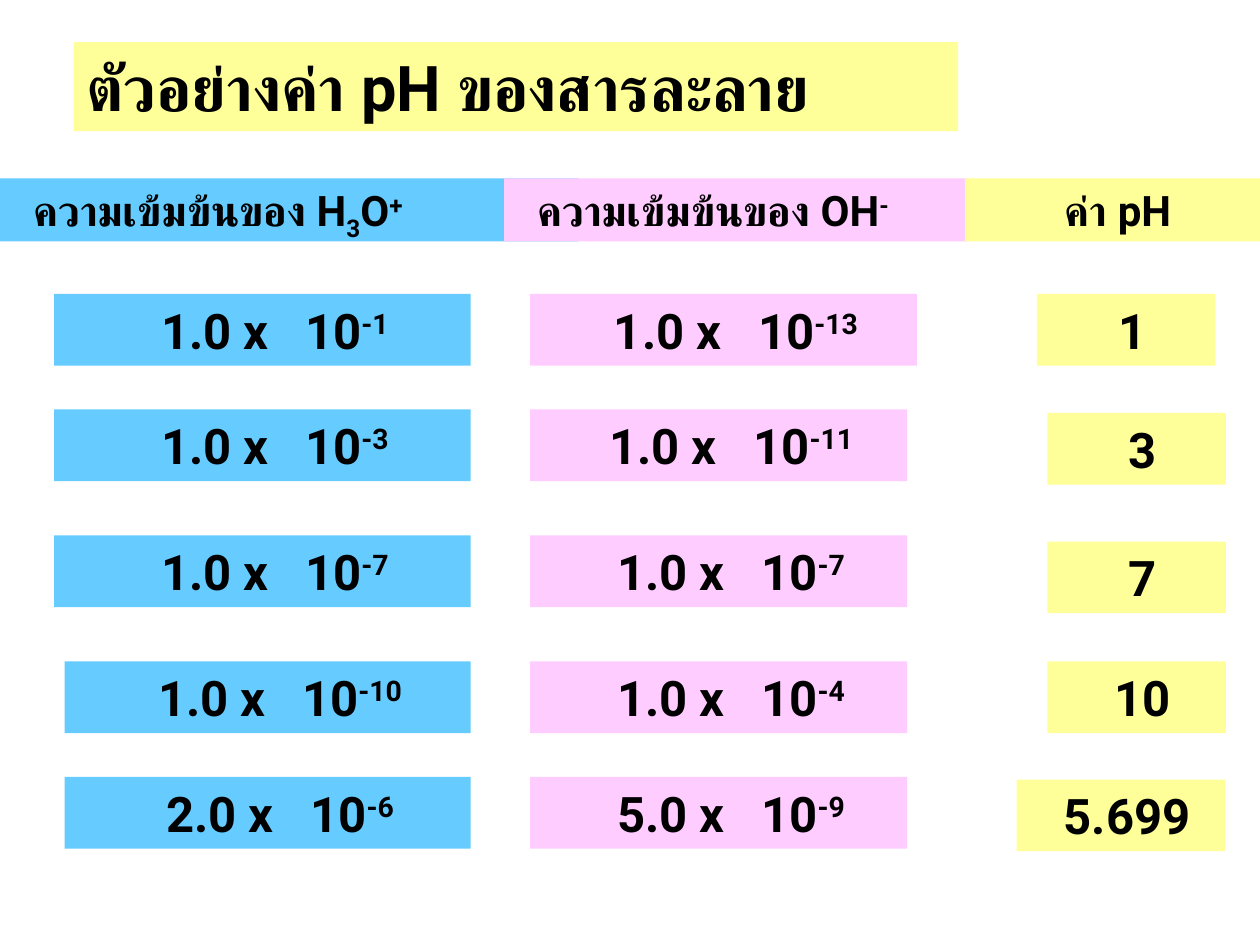
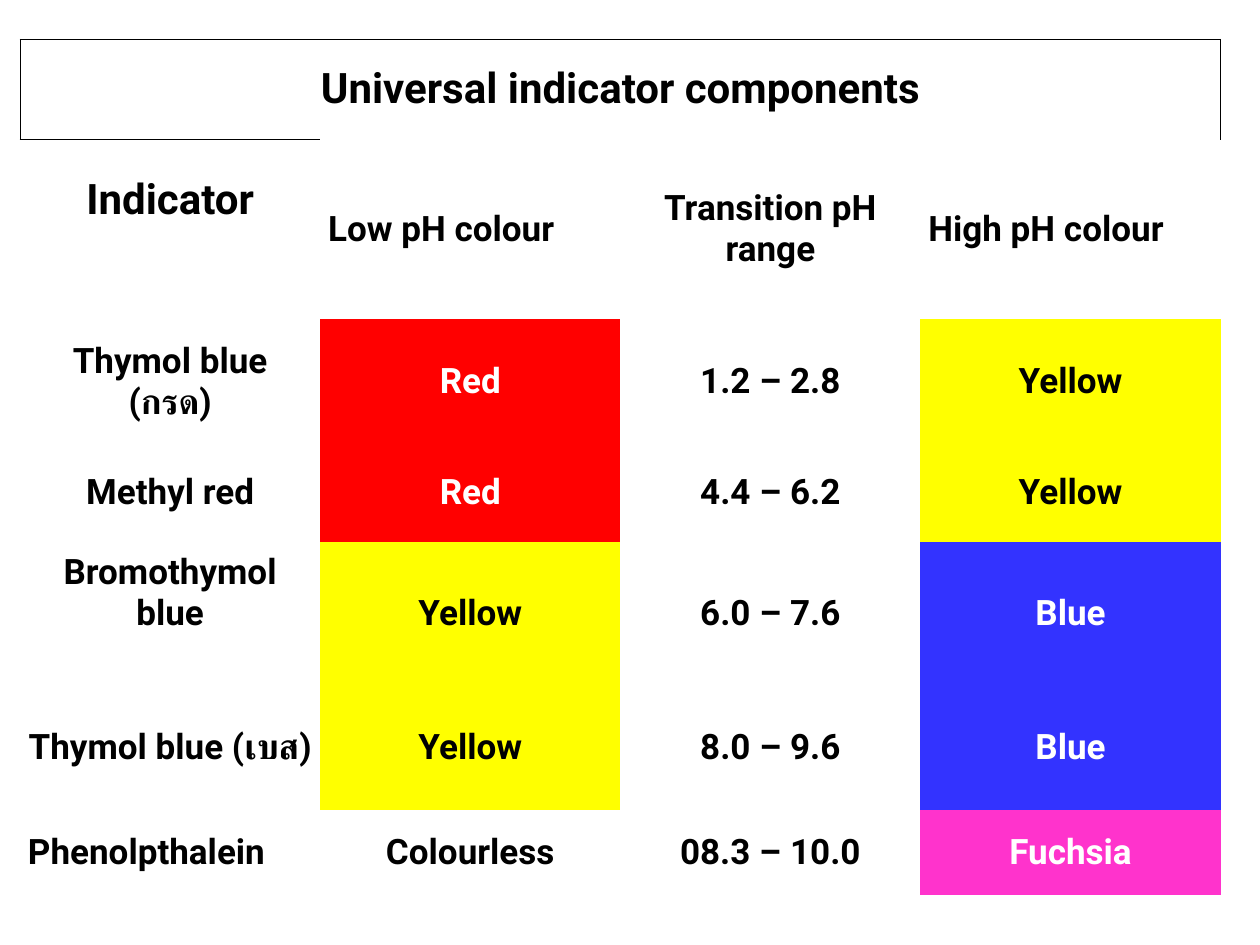
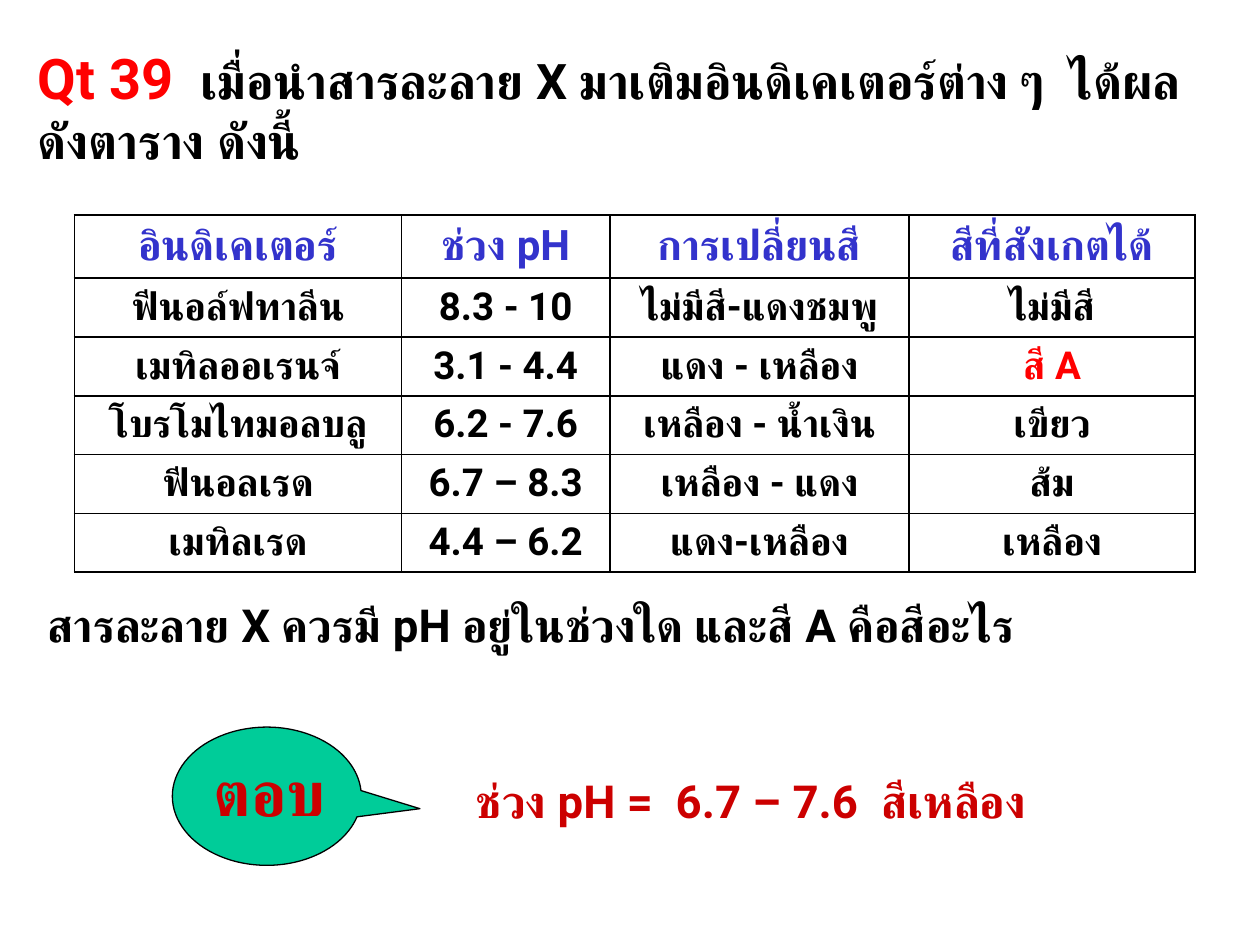
from lxml import etree
from pptx import Presentation
from pptx.enum.shapes import MSO_SHAPE as Shape
from pptx.enum.text import MSO_ANCHOR as Anchor, MSO_AUTO_SIZE as AutoSize, PP_ALIGN as Align
from pptx.dml.color import RGBColor
from pptx.oxml.ns import qn
from pptx.util import Pt

FONT = "Roboto"
INSET = 7.2
COLOURS = {
    "black": "000000", "white": "FFFFFF", "red": "FF0000", "answer": "CC0000",
    "heading": "3333CC", "sky": "66CCFF", "pink": "FFCCFF", "cream": "FFFF99",
    "yellow": "FFFF00", "blue": "3333FF", "fuchsia": "FF33CC", "green": "00CC99",
}
RGB = {name: RGBColor.from_string(value) for name, value in COLOURS.items()}


def write(paragraph, pieces, size, colour="black", align=Align.LEFT):
    """Fill a paragraph from (text, overrides) pieces; a plain string is one piece.

    Overrides: size, colour, baseline (thousandths), spacing (hundredths of a point).
    """
    paragraph.alignment = align
    if isinstance(pieces, str):
        pieces = [(pieces, {})]
    for text, overrides in pieces:
        run = paragraph.add_run()
        run.text = text
        run.font.name = FONT
        run.font.bold = True
        run.font.size = Pt(overrides.get("size", size))
        run.font.color.rgb = RGB[overrides.get("colour", colour)]
        properties = run._r.get_or_add_rPr()
        etree.SubElement(properties, qn("a:cs"), typeface=FONT)
        if "baseline" in overrides:
            properties.set("baseline", str(overrides["baseline"]))
        if "spacing" in overrides:
            properties.set("spc", str(overrides["spacing"]))


def set_borders(cell, drawn_sides, width):
    """Draw black lines on the given sides (letters of LRTB) and clear the rest."""
    properties = cell._tc.get_or_add_tcPr()
    for side in "LRTB":
        line = etree.SubElement(properties, qn(f"a:ln{side}"), w=str(Pt(width)))
        if side in drawn_sides:
            fill = etree.SubElement(line, qn("a:solidFill"))
            etree.SubElement(fill, qn("a:srgbClr"), val=COLOURS["black"])
        else:
            etree.SubElement(line, qn("a:noFill"))


prs = Presentation()
prs.slide_width, prs.slide_height = Pt(720), Pt(540)
TITLE_ONLY, BLANK = prs.slide_layouts[5], prs.slide_layouts[6]
SUPER, SUB = 30000, -25000

# Slide 1: pH of sample solutions
examples = prs.slides.add_slide(TITLE_ONLY)
question = prs.slides.add_slide(TITLE_ONLY)
titles = [
    (examples, (42, 24, 505.5, 51), "ตัวอย่างค่า pH ของสารละลาย", 36),
    (question, (14.5, 21, 680.5, 80), [
        ("Qt 39", {"size": 32, "colour": "red"}),
        (" ", {"size": 32, "spacing": 700}),
        ("เมื่อนำสารละลาย X มาเติมอินดิเคเตอร์ต่าง ๆ", {}),
        (" ", {"spacing": 700}),
        ("ได้ผลดังตาราง ดังนี้", {}),
    ], 28),
]
for slide, place, pieces, size in titles:
    title = slide.shapes.title
    title.left, title.top, title.width, title.height = map(Pt, place)
    title.text_frame.auto_size = AutoSize.NONE
    title.text_frame.word_wrap = True
    title.text_frame.vertical_anchor = Anchor.TOP
    write(title.text_frame.paragraphs[0], pieces, size)
examples.shapes.title.fill.solid()
examples.shapes.title.fill.fore_color.rgb = RGB["cream"]

# Each block: place, colour, pieces, size, alignment, extra left inset
blocks = [
    ((0, 102, 330.5, 36), "sky", [
        ("ความเข้มข้นของ H", {}), ("3", {"baseline": SUB}), ("O", {}), ("+", {"baseline": SUPER}),
    ], 24, Align.LEFT, 12),
    ((288, 102, 265, 36), "pink", [
        ("ความเข้มข้นของ OH", {}), ("-", {"baseline": SUPER}),
    ], 24, Align.LEFT, 12),
    ((551.5, 102, 168.5, 36), "cream", "ค่า pH", 24, Align.CENTER, 6),
]

# Each solution: top, acid (left, factor, power), base (width, factor, power), pH (left, top, width, value)
solutions = [
    (168, (31, "1.0", "-1"), (221, "1.0", "-13"), (592.5, 168, 102, "1")),
    (234, (31, "1.0", "-3"), (215.5, "1.0", "-11"), (598.5, 236, 102, "3")),
    (306, (31, "1.0", "-7"), (215.5, "1.0", "-7"), (598.5, 309.5, 102, "7")),
    (378, (37, "1.0", "-10"), (215.5, "1.0", "-4"), (598.5, 378, 102, "10")),
    (444, (37, "2.0", "-6"), (215.5, "5.0", "-9"), (581, 445.5, 119, "5.699")),
]
ACID_RIGHT, BASE_LEFT, BLOCK_HEIGHT = 269, 303, 41
for top, (acid_left, *acid), (base_width, *base), (ph_left, ph_top, ph_width, ph) in solutions:
    for left, width, colour, (factor, power) in (
        (acid_left, ACID_RIGHT - acid_left, "sky", acid),
        (BASE_LEFT, base_width, "pink", base),
    ):
        concentration = [
            (f"{factor} x", {}), (" ", {"spacing": 1400}), ("10", {}), (power, {"baseline": SUPER}),
        ]
        blocks.append(((left, top, width, BLOCK_HEIGHT), colour, concentration, 28, Align.CENTER, 14))
    blocks.append(((ph_left, ph_top, ph_width, BLOCK_HEIGHT), "cream", ph, 28, Align.CENTER, 7))

for place, colour, pieces, size, align, indent in blocks:
    block = examples.shapes.add_shape(Shape.RECTANGLE, *map(Pt, place))
    block.shadow.inherit = False
    block.fill.solid()
    block.fill.fore_color.rgb = RGB[colour]
    block.line.fill.background()
    frame = block.text_frame
    frame.word_wrap = True
    frame.vertical_anchor = Anchor.TOP
    frame.margin_left = Pt(INSET + indent)
    write(frame.paragraphs[0], pieces, size, align=align)

# Slide 2: universal indicator
universal = prs.slides.add_slide(BLANK)
slide_ids = prs.slides._sldIdLst
slide_ids.insert(1, slide_ids[2])

components = [
    ("Universal indicator components", "", "", ""),
    ("Indicator", "Low pH colour", "Transition pH range", "High pH colour"),
    ("Thymol blue (กรด)", "Red", "1.2 – 2.8", "Yellow"),
    ("Methyl red", "Red", "4.4 – 6.2", "Yellow"),
    ("Bromothymol blue", "Yellow", "6.0 – 7.6", "Blue"),
    ("Thymol blue (เบส)", "Yellow", "8.0 – 9.6", "Blue"),
    ("Phenolpthalein", "Colourless", "08.3 – 10.0", "Fuchsia"),
]
component_heights = [57, 103, 71.5, 55.5, 82, 71.5, 48.5]
left_aligned = {"Low pH colour", "High pH colour", "Phenolpthalein"}
raised = {"Indicator": 33, "Bromothymol blue": 23}
frame_sides = {(0, 0): "LRTB", (0, 1): "T", (0, 2): "T", (0, 3): "RT", (1, 0): "T"}

table = universal.shapes.add_table(7, 4, Pt(11.5), Pt(22.5), Pt(686), Pt(489)).table
for column in table.columns:
    column.width = Pt(171.5)
for r, (row, height) in enumerate(zip(components, component_heights)):
    table.rows[r].height = Pt(height)
    for c, text in enumerate(row):
        cell = table.cell(r, c)
        set_borders(cell, frame_sides.get((r, c), ""), 0.75)
        cell.vertical_anchor = Anchor.MIDDLE
        cell.margin_left = cell.margin_right = Pt(4.5)
        cell.margin_top = Pt(2.25)
        cell.margin_bottom = Pt(2.25 + raised.get(text, 0))
        swatch = text.lower()
        if swatch in COLOURS:
            cell.fill.solid()
            cell.fill.fore_color.rgb = RGB[swatch]
        else:
            cell.fill.background()
        if text:
            write(cell.text_frame.paragraphs[0], text,
                  24 if c == 0 and r < 2 else 20,
                  "white" if swatch in ("red", "blue", "fuchsia") else "black",
                  Align.LEFT if text in left_aligned else Align.CENTER)
table.cell(0, 0).merge(table.cell(0, 3))

# Slide 3: question on solution X
observations = [
    ("อินดิเคเตอร์", "ช่วง pH", "การเปลี่ยนสี", "สีที่สังเกตได้"),
    ("ฟีนอล์ฟทาลีน", "8.3 - 10", "ไม่มีสี-แดงชมพู", "ไม่มีสี"),
    ("เมทิลออเรนจ์", "3.1 - 4.4", "แดง - เหลือง", "สี A"),
    ("โบรโมไทมอลบลู", "6.2 - 7.6", "เหลือง - น้ำเงิน", "เขียว"),
    ("ฟีนอลเรด", "6.7 – 8.3", "เหลือง - แดง", "ส้ม"),
    ("เมทิลเรด", "4.4 – 6.2", "แดง-เหลือง", "เหลือง"),
]
table = question.shapes.add_table(6, 4, Pt(42.5), Pt(123), Pt(640.5), Pt(204)).table
for column, width in zip(table.columns, (187, 119, 171, 163.5)):
    column.width = Pt(width)
for r, row in enumerate(observations):
    table.rows[r].height = Pt(33.6 if r else 36)
    for c, text in enumerate(row):
        cell = table.cell(r, c)
        set_borders(cell, "LRTB", 1)
        cell.fill.background()
        colour = "heading" if r == 0 else "red" if text == "สี A" else "black"
        write(cell.text_frame.paragraphs[0], text, 22 if r else 24, colour, Align.CENTER)

callout = question.shapes.add_shape(Shape.OVAL_CALLOUT, Pt(98.5), Pt(415.5), Pt(108), Pt(79))
callout.adjustments[0], callout.adjustments[1] = 0.81, 0.09
callout.shadow.inherit = False
callout.fill.solid()
callout.fill.fore_color.rgb = RGB["green"]
callout.line.color.rgb = RGB["black"]
callout.line.width = Pt(0.75)

answer = [
    ("ช่วง pH =", {}), (" ", {"spacing": 650}), ("6.7 – 7.6", {}),
    (" ", {"spacing": 650}), ("สีเหลือง", {}),
]
for place, pieces, size, colour, align, indent in (
    ((20, 337.5, 680.5, 39), "สารละลาย X ควรมี pH อยู่ในช่วงใด และสี A คือสีอะไร", 26, "black", Align.LEFT, 0),
    ((223, 438, 405.5, 39), answer, 26, "answer", Align.CENTER, 6.5),
    ((98.5, 427, 102, 51), "ตอบ", 36, "answer", Align.CENTER, 9),
):
    frame = question.shapes.add_textbox(*map(Pt, place)).text_frame
    frame.word_wrap = True
    frame.margin_left = Pt(INSET + indent)
    write(frame.paragraphs[0], pieces, size, colour, align)

prs.save("out.pptx")
